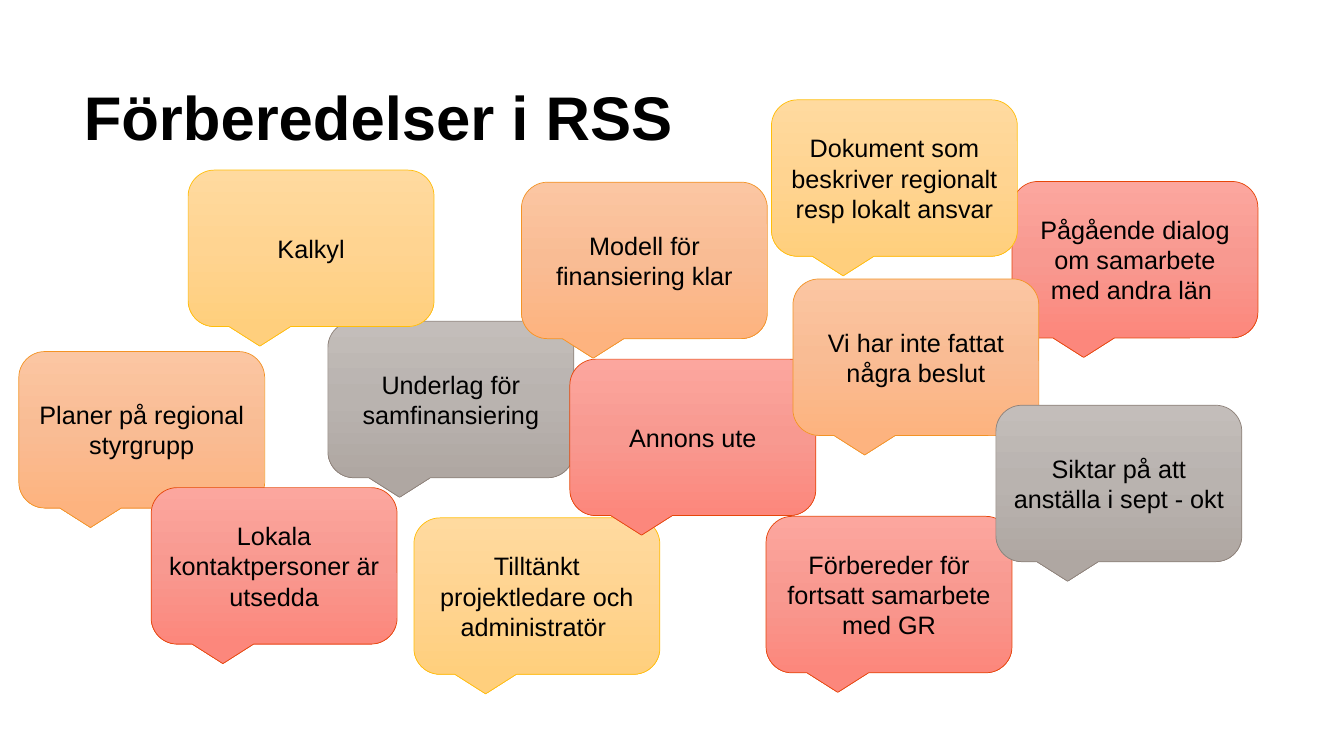
from copy import deepcopy
from dataclasses import dataclass
from enum import Enum

from pptx import Presentation
from pptx.dml.color import RGBColor
from pptx.enum.shapes import MSO_SHAPE
from pptx.enum.text import MSO_ANCHOR, PP_ALIGN
from pptx.oxml.ns import qn
from pptx.shapes.autoshape import Shape
from pptx.slide import Slide
from pptx.text.text import TextFrame
from pptx.util import Inches, Pt

SLIDE_WIDTH = Inches(13.33)
SLIDE_HEIGHT = Inches(7.5)
FONT_NAME = "Arial"
BLACK = RGBColor(0x00, 0x00, 0x00)
BUBBLE_WIDTH = 18.3
BUBBLE_HEIGHT = 20.7


@dataclass(frozen=True)
class Palette:
    top: RGBColor
    middle: RGBColor
    bottom: RGBColor
    outline: RGBColor


class Tone(Enum):
    RED = Palette(RGBColor(0xFC, 0xA6, 0x9E), RGBColor(0xF8, 0x99, 0x90),
                  RGBColor(0xFC, 0x87, 0x7C), RGBColor(0xE6, 0x46, 0x0A))
    ORANGE = Palette(RGBColor(0xFB, 0xC6, 0xA2), RGBColor(0xF9, 0xBC, 0x94),
                     RGBColor(0xFD, 0xB3, 0x7F), RGBColor(0xF3, 0x93, 0x25))
    YELLOW = Palette(RGBColor(0xFF, 0xDA, 0x9F), RGBColor(0xFF, 0xD4, 0x91),
                     RGBColor(0xFF, 0xCF, 0x7D), RGBColor(0xFF, 0xBE, 0x0A))
    GREY = Palette(RGBColor(0xC3, 0xBD, 0xBA), RGBColor(0xB9, 0xB3, 0xAF),
                   RGBColor(0xAF, 0xA7, 0xA2), RGBColor(0x8D, 0x81, 0x79))


@dataclass(frozen=True)
class Bubble:
    left: float
    top: float
    tone: Tone
    text: str


BUBBLES = [
    Bubble(75.3, 24, Tone.RED, "Pågående dialog om samarbete med andra län "),
    Bubble(1.4, 46.5, Tone.ORANGE, "Planer på regional styrgrupp"),
    Bubble(30.8, 68.5, Tone.YELLOW, "Tilltänkt projektledare och administratör "),
    Bubble(24.4, 42.5, Tone.GREY, "Underlag för samfinansiering"),
    Bubble(42.4, 47.5, Tone.RED, "Annons ute"),
    Bubble(57, 68.3, Tone.RED, "Förbereder för fortsatt samarbete med GR"),
    Bubble(59, 36.9, Tone.ORANGE, "Vi har inte fattat några beslut"),
    Bubble(11.25, 64.5, Tone.RED, "Lokala kontaktpersoner är utsedda"),
    Bubble(74.1, 53.6, Tone.GREY, "Siktar på att anställa i sept - okt"),
    Bubble(57.4, 13.2, Tone.YELLOW,
           "Dokument som beskriver regionalt resp lokalt ansvar"),
    Bubble(38.8, 24.1, Tone.ORANGE, "Modell för finansiering klar"),
    Bubble(14, 22.5, Tone.YELLOW, "Kalkyl"),
]


def across(percent: float) -> int:
    """Convert a percentage of the slide width to a length."""
    return round(SLIDE_WIDTH * percent / 100)


def down(percent: float) -> int:
    """Convert a percentage of the slide height to a length."""
    return round(SLIDE_HEIGHT * percent / 100)


def write_text(text_frame: TextFrame, text: str, size: int, bold: bool = False) -> None:
    """Fill a wrapping text frame with one black paragraph."""
    text_frame.word_wrap = True
    text_frame.text = text
    font = text_frame.paragraphs[0].runs[0].font
    font.name = FONT_NAME
    font.size = Pt(size)
    font.bold = bold
    font.color.rgb = BLACK


def fill_gradient(shape: Shape, palette: Palette) -> None:
    """Give a shape a three-colour gradient running downwards."""
    shape.fill.gradient()
    shape.fill.gradient_angle = 270
    stop_list = shape._element.spPr.find(qn("a:gradFill")).find(qn("a:gsLst"))
    stop_list.insert(1, deepcopy(stop_list[0]))
    colors = (palette.top, palette.middle, palette.bottom)
    for stop, position, color in zip(shape.fill.gradient_stops, (0, 0.5, 1), colors):
        stop.position = position
        stop.color.rgb = color


def add_title(slide: Slide, text: str) -> None:
    """Add the slide heading."""
    title = slide.shapes.add_textbox(across(5.5), down(10.5), across(78.8), down(16.3))
    write_text(title.text_frame, text, 44, bold=True)
    title.text_frame.paragraphs[0].line_spacing = 0.95


def add_bubble(slide: Slide, bubble: Bubble) -> None:
    """Add one speech bubble."""
    shape = slide.shapes.add_shape(
        MSO_SHAPE.ROUNDED_RECTANGULAR_CALLOUT, across(bubble.left), down(bubble.top),
        across(BUBBLE_WIDTH), down(BUBBLE_HEIGHT))
    shape.shadow.inherit = False
    fill_gradient(shape, bubble.tone.value)
    shape.line.color.rgb = bubble.tone.value.outline
    shape.line.width = Pt(0.5)
    write_text(shape.text_frame, bubble.text, 18)
    shape.text_frame.vertical_anchor = MSO_ANCHOR.MIDDLE
    shape.text_frame.paragraphs[0].alignment = PP_ALIGN.CENTER


def main() -> None:
    """Build and save the presentation."""
    presentation = Presentation()
    presentation.slide_width = SLIDE_WIDTH
    presentation.slide_height = SLIDE_HEIGHT
    slide = presentation.slides.add_slide(presentation.slide_layouts[6])
    add_title(slide, "Förberedelser i RSS")
    for bubble in BUBBLES:
        add_bubble(slide, bubble)
    presentation.save("out.pptx")


if __name__ == "__main__":
    main()
